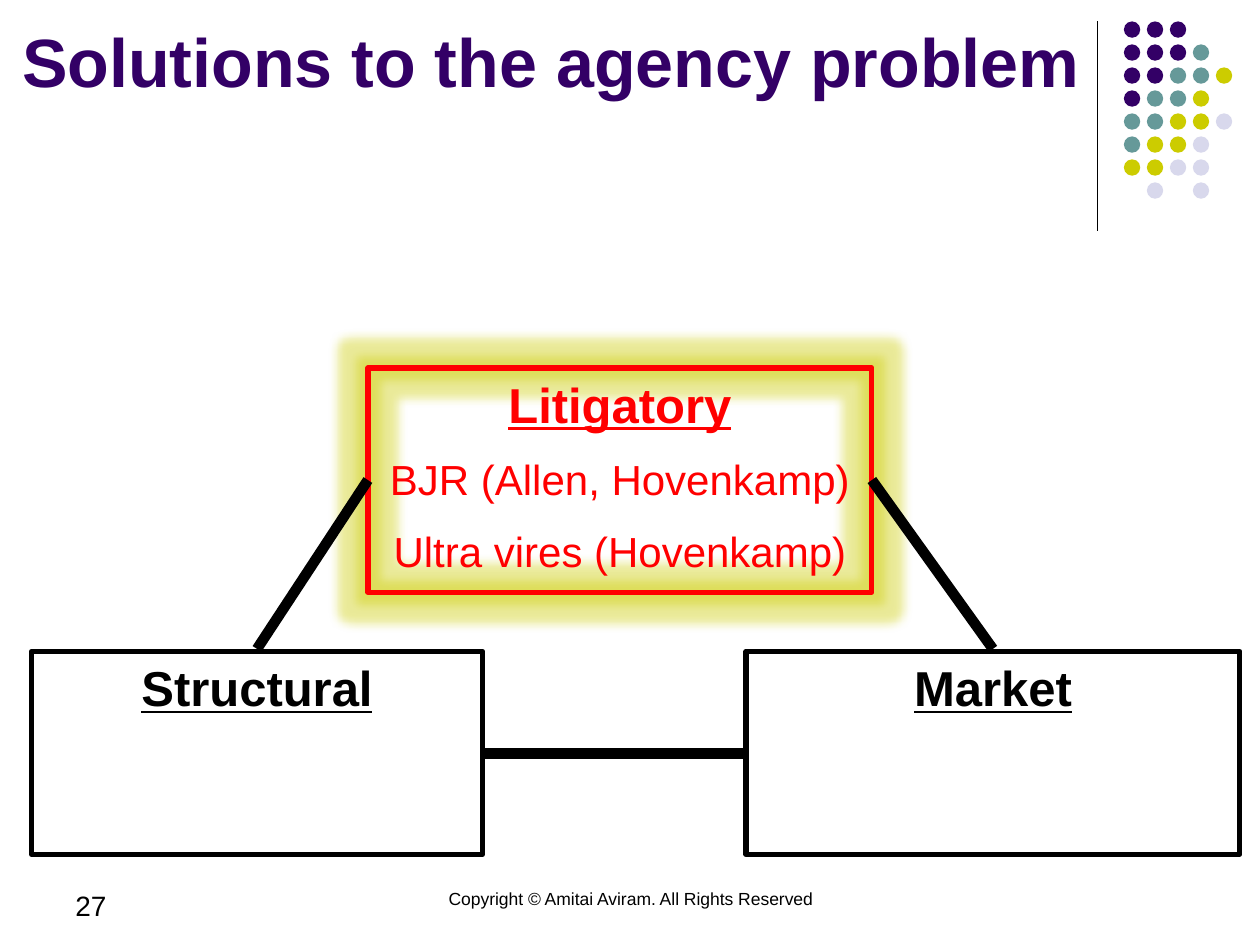
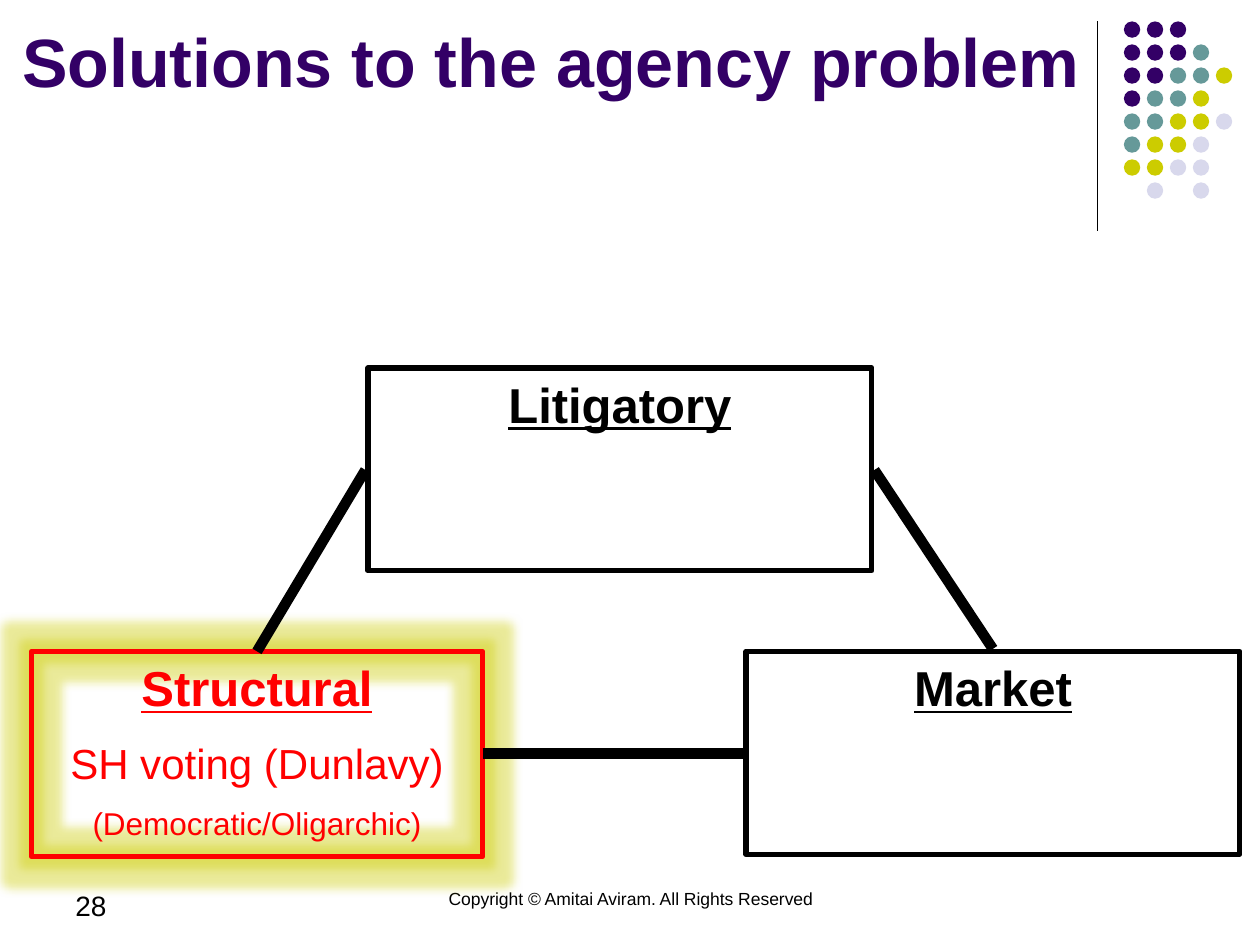
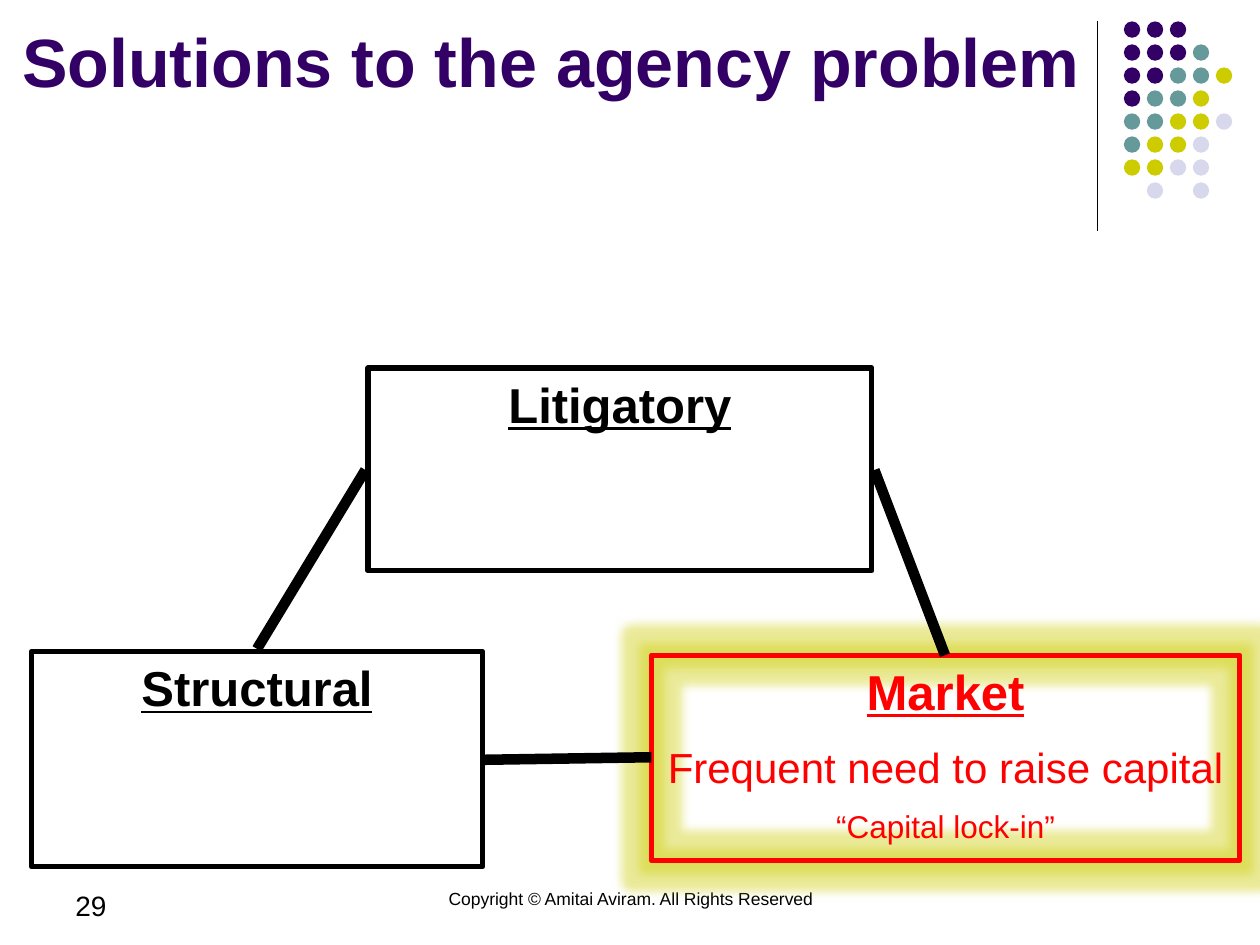
"""Build three slides on solutions to the agency problem."""
from dataclasses import dataclass

from lxml import etree
from pptx import Presentation
from pptx.dml.color import RGBColor
from pptx.enum import shapes, text
from pptx.oxml import ns
from pptx.util import Inches, Pt

PLUM = RGBColor(0x33, 0x00, 0x66)
TEAL = RGBColor(0x66, 0x99, 0x99)
LIME = RGBColor(0xCC, 0xCC, 0x00)
MIST = RGBColor(0xD8, 0xD8, 0xEC)
BLACK = RGBColor(0x00, 0x00, 0x00)
RED = RGBColor(0xFF, 0x00, 0x00)
FACE = "Arial"
TITLE = "Solutions to the agency problem"
NOTICE = "Copyright © Amitai Aviram. All Rights Reserved"
DOTS = ("PPP", "PPPT", "PPTTY", "PTTY", "TTYYL", "TYYL", "YYLL", " L L")
TONES = {"P": PLUM, "T": TEAL, "Y": LIME, "L": MIST}
PITCH = 0.73 / 4


@dataclass
class Line:
    words: str
    size: int = 24


@dataclass
class Box:
    head: str
    left: float
    top: float
    width: float
    height: float
    lines: tuple[Line, ...] = ()


@dataclass
class Link:
    x1: float
    y1: float
    x2: float
    y2: float


@dataclass
class Page:
    number: int
    boxes: tuple[Box, ...]
    links: tuple[Link, ...]


LEGAL = Box("Litigatory", 2.92, 2.92, 4, 1.61)
MARKET = Box("Market", 5.92, 5.17, 3.92, 1.61)
RIGHT = Link(6.94, 3.73, 7.88, 5.15)

PAGES = (
    Page(27, (
        Box("Litigatory", 2.92, 2.92, 4, 1.78,
            (Line("BJR (Allen, Hovenkamp)"), Line("Ultra vires (Hovenkamp)"))),
        Box("Structural", 0.25, 5.17, 3.58, 1.61),
        MARKET,
    ), (Link(6.92, 3.81, 7.88, 5.15), Link(3.85, 5.98, 5.9, 5.98),
        Link(2.92, 3.81, 2.04, 5.15))),
    Page(28, (
        LEGAL,
        Box("Structural", 0.25, 5.17, 3.58, 1.63,
            (Line("SH voting (Dunlavy)"), Line("(Democratic/Oligarchic)", 18))),
        MARKET,
    ), (RIGHT, Link(3.83, 5.98, 5.9, 5.98), Link(2.9, 3.73, 2.04, 5.17))),
    Page(29, (
        LEGAL,
        Box("Structural", 0.25, 5.17, 3.58, 1.71),
        Box("Market", 5.17, 5.2, 4.67, 1.63,
            (Line("Frequent need to raise capital"), Line("“Capital lock-in”", 18))),
    ), (Link(6.94, 3.73, 7.5, 5.2), Link(3.85, 6.03, 5.17, 6.01),
        Link(2.9, 3.73, 2.04, 5.15))),
)


def style(para, size: float, tone: RGBColor, bold: bool = False,
          centre: bool = True) -> None:
    """Set the font and alignment of a paragraph."""
    font = para.font
    font.name, font.size, font.bold = FACE, Pt(size), bold
    font.color.rgb = tone
    para.alignment = text.PP_ALIGN.CENTER if centre else text.PP_ALIGN.LEFT


def space(para) -> None:
    """Put half a line of space before a paragraph."""
    para.space_before = Pt(0)
    gap = para._p.pPr.find(ns.qn("a:spcBef"))
    gap.remove(gap[0])
    etree.SubElement(gap, ns.qn("a:spcPct"), val="50000")


def glow(shape) -> None:
    """Give a shape a soft lime glow."""
    props = shape._element.spPr
    effects = props.find(ns.qn("a:effectLst"))
    halo = etree.SubElement(effects, ns.qn("a:glow"), rad=str(Pt(11)))
    tone = etree.SubElement(halo, ns.qn("a:srgbClr"), val=str(LIME))
    etree.SubElement(tone, ns.qn("a:alpha"), val="40000")


def draw_link(slide, link: Link, weight: float) -> None:
    """Draw a straight black line."""
    line = slide.shapes.add_connector(
        shapes.MSO_CONNECTOR.STRAIGHT, Inches(link.x1), Inches(link.y1),
        Inches(link.x2), Inches(link.y2))
    line.line.color.rgb = BLACK
    line.line.width = Pt(weight)
    etree.SubElement(line._element.spPr, ns.qn("a:effectLst"))


def draw_dots(slide) -> None:
    """Draw the corner grid of dots."""
    for row, marks in enumerate(DOTS):
        for col, mark in enumerate(marks):
            if mark in TONES:
                dot = slide.shapes.add_shape(
                    shapes.MSO_SHAPE.OVAL, Inches(8.92 + col * PITCH),
                    Inches(0.17 + row * PITCH), Inches(0.13), Inches(0.13))
                dot.shadow.inherit = False
                dot.fill.solid()
                dot.fill.fore_color.rgb = TONES[mark]
                dot.line.fill.background()


def draw_note(slide, words: str, left: float, width: float, size: int,
              centre: bool) -> None:
    """Write one piece of the footer."""
    note = slide.shapes.add_textbox(
        Inches(left), Inches(7), Inches(width), Inches(0.5))
    frame = note.text_frame
    frame.word_wrap = True
    frame.text = words
    style(frame.paragraphs[0], size, BLACK, centre=centre)


def draw_title(slide) -> None:
    """Place and format the title."""
    title = slide.shapes.title
    title.left, title.top = Inches(0), Inches(0)
    title.width, title.height = Inches(8.75), Inches(1.42)
    frame = title.text_frame
    frame.text = TITLE
    frame.auto_size = text.MSO_AUTO_SIZE.NONE
    frame.vertical_anchor = text.MSO_ANCHOR.BOTTOM
    frame.margin_bottom = Inches(0.62)
    style(frame.paragraphs[0], 39, PLUM, bold=True)


def draw_box(slide, box: Box) -> None:
    """Draw a box, red and glowing when it holds lines."""
    tone = RED if box.lines else BLACK
    shape = slide.shapes.add_shape(
        shapes.MSO_SHAPE.RECTANGLE, Inches(box.left), Inches(box.top),
        Inches(box.width), Inches(box.height))
    shape.shadow.inherit = False
    shape.fill.background()
    shape.line.color.rgb = tone
    shape.line.width = Pt(3)
    if box.lines:
        glow(shape)
    frame = shape.text_frame
    frame.word_wrap = True
    frame.vertical_anchor = text.MSO_ANCHOR.TOP
    head = frame.paragraphs[0]
    head.text = box.head
    style(head, 28, tone, bold=True)
    head.font.underline = True
    space(head)
    for line in box.lines:
        para = frame.add_paragraph()
        para.text = line.words
        style(para, line.size, tone)
        space(para)


def draw_page(deck, page: Page) -> None:
    """Add one slide."""
    slide = deck.slides.add_slide(deck.slide_layouts[5])
    draw_link(slide, Link(8.71, 0.17, 8.71, 1.83), 0.75)
    draw_dots(slide)
    draw_note(slide, NOTICE, 3.42, 3.17, 10, True)
    draw_note(slide, str(page.number), 0.5, 2.33, 16, False)
    draw_title(slide)
    for box in page.boxes:
        draw_box(slide, box)
    for link in page.links:
        draw_link(slide, link, 6)


def main() -> None:
    """Build and save the deck."""
    deck = Presentation()
    deck.slide_width, deck.slide_height = Inches(10), Inches(7.5)
    for page in PAGES:
        draw_page(deck, page)
    deck.save("out.pptx")


if __name__ == "__main__":
    main()
